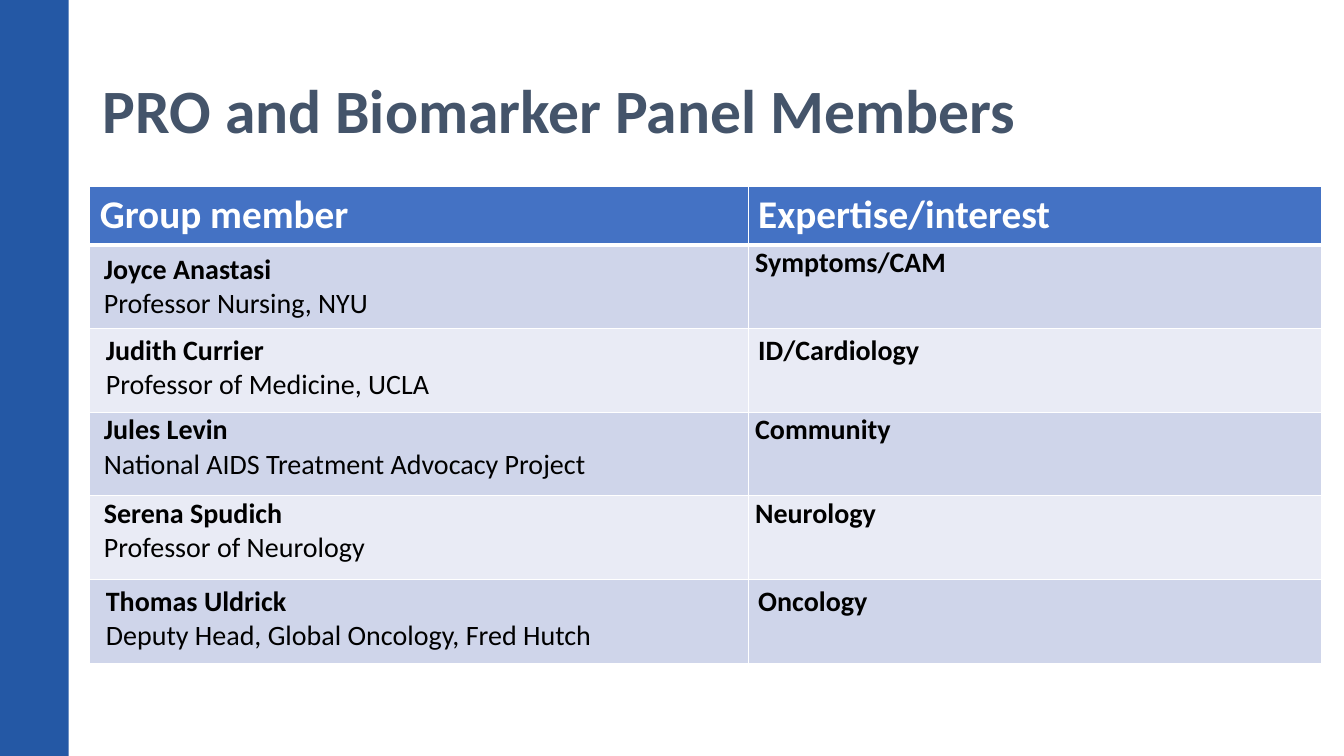
from dataclasses import dataclass

from lxml.etree import SubElement
from pptx import Presentation
from pptx.dml.color import RGBColor
from pptx.enum.shapes import MSO_SHAPE
from pptx.enum.text import MSO_ANCHOR
from pptx.oxml import parse_xml
from pptx.oxml.ns import nsdecls, qn
from pptx.table import _Cell as Cell
from pptx.util import Inches, Pt

FONT = "Calibri"
WHITE = "FFFFFF"
BLACK = "000000"
HEAD = "4472C4"
BANDS = ("CFD5EA", "E9EBF5")
WIDTHS = (6.53, 5.69)
HEIGHTS = (0.58, 0.83, 0.83, 0.83, 0.83, 0.83)


@dataclass
class Member:
    name: str
    role: str
    field: str
    tight: bool = True
    anchor: MSO_ANCHOR = MSO_ANCHOR.TOP


MEMBERS = (
    Member("Joyce Anastasi", "Professor Nursing, NYU", "Symptoms/CAM",
           anchor=MSO_ANCHOR.MIDDLE),
    Member("Judith Currier", "Professor of Medicine, UCLA", "ID/Cardiology",
           tight=False),
    Member("Jules Levin", "National AIDS Treatment Advocacy Project", "Community"),
    Member("Serena Spudich", "Professor of Neurology", "Neurology"),
    Member("Thomas Uldrick", "Deputy Head, Global Oncology, Fred Hutch", "Oncology",
           tight=False),
)


def color(code: str) -> RGBColor:
    return RGBColor.from_string(code)


def style(para, size: float, code: str, bold: bool = True) -> None:
    font = para.font
    font.name = FONT
    font.size = Pt(size)
    font.bold = bold
    font.color.rgb = color(code)


def border(cell: Cell, top: float, bottom: float) -> None:
    props = cell._tc.get_or_add_tcPr()
    sides = (("lnL", 1), ("lnR", 1), ("lnT", top), ("lnB", bottom))
    for index, (side, width) in enumerate(sides):
        line = parse_xml(f'<a:{side} {nsdecls("a")} w="{Pt(width)}"/>')
        fill = SubElement(line, qn("a:solidFill"))
        SubElement(fill, qn("a:srgbClr"), val=WHITE)
        props.insert(index, line)


def paint(cell: Cell, code: str, top: float = 1, bottom: float = 1) -> None:
    cell.fill.solid()
    cell.fill.fore_color.rgb = color(code)
    border(cell, top, bottom)


def write(cell: Cell, text: str, size: float, code: str) -> None:
    cell.text = text
    for index, para in enumerate(cell.text_frame.paragraphs):
        style(para, size, code, bold=index == 0)


def inset(cell: Cell, left: float, tight: bool) -> None:
    cell.margin_left = Inches(left)
    cell.margin_right = Inches(0.01 if tight else 0.1)
    cell.margin_top = Inches(0.01 if tight else 0.05)
    cell.margin_bottom = Inches(0 if tight else 0.05)


def add_bar(slide) -> None:
    bar = slide.shapes.add_shape(
        MSO_SHAPE.RECTANGLE, 0, 0, Inches(0.68), Inches(7.5))
    bar.shadow.inherit = False
    bar.fill.solid()
    bar.fill.fore_color.rgb = color("2458A5")
    bar.line.fill.background()


def add_title(slide) -> None:
    box = slide.shapes.add_textbox(
        Inches(0.92), Inches(0.4), Inches(11.5), Inches(1.45))
    frame = box.text_frame
    frame.word_wrap = True
    frame.vertical_anchor = MSO_ANCHOR.MIDDLE
    frame.text = "PRO and Biomarker Panel Members"
    para = frame.paragraphs[0]
    para.line_spacing = 0.9
    style(para, 44, "44546A")


def add_panel(slide) -> None:
    table = slide.shapes.add_table(
        len(HEIGHTS), len(WIDTHS), Inches(0.89), Inches(1.85),
        Inches(sum(WIDTHS)), Inches(sum(HEIGHTS))).table
    for column, width in zip(table.columns, WIDTHS):
        column.width = Inches(width)
    for row, height in zip(table.rows, HEIGHTS):
        row.height = Inches(height)
    for index, text in enumerate(("Group member", "Expertise/interest")):
        cell = table.cell(0, index)
        write(cell, text, 28, WHITE)
        paint(cell, HEAD, bottom=3)
    for row, member in enumerate(MEMBERS, 1):
        who, field = table.cell(row, 0), table.cell(row, 1)
        write(who, f"{member.name}\n{member.role}", 20, BLACK)
        write(field, member.field, 20, BLACK)
        who.vertical_anchor = member.anchor
        inset(who, 0.14 if member.tight else 0.16, member.tight)
        inset(field, 0.07 if member.tight else 0.1, member.tight)
        for cell in (who, field):
            paint(cell, BANDS[(row - 1) % 2], top=3 if row == 1 else 1)


def main() -> None:
    deck = Presentation()
    deck.slide_width = Inches(13.33)
    deck.slide_height = Inches(7.5)
    slide = deck.slides.add_slide(deck.slide_layouts[6])
    add_bar(slide)
    add_title(slide)
    add_panel(slide)
    deck.save("out.pptx")


if __name__ == "__main__":
    main()
